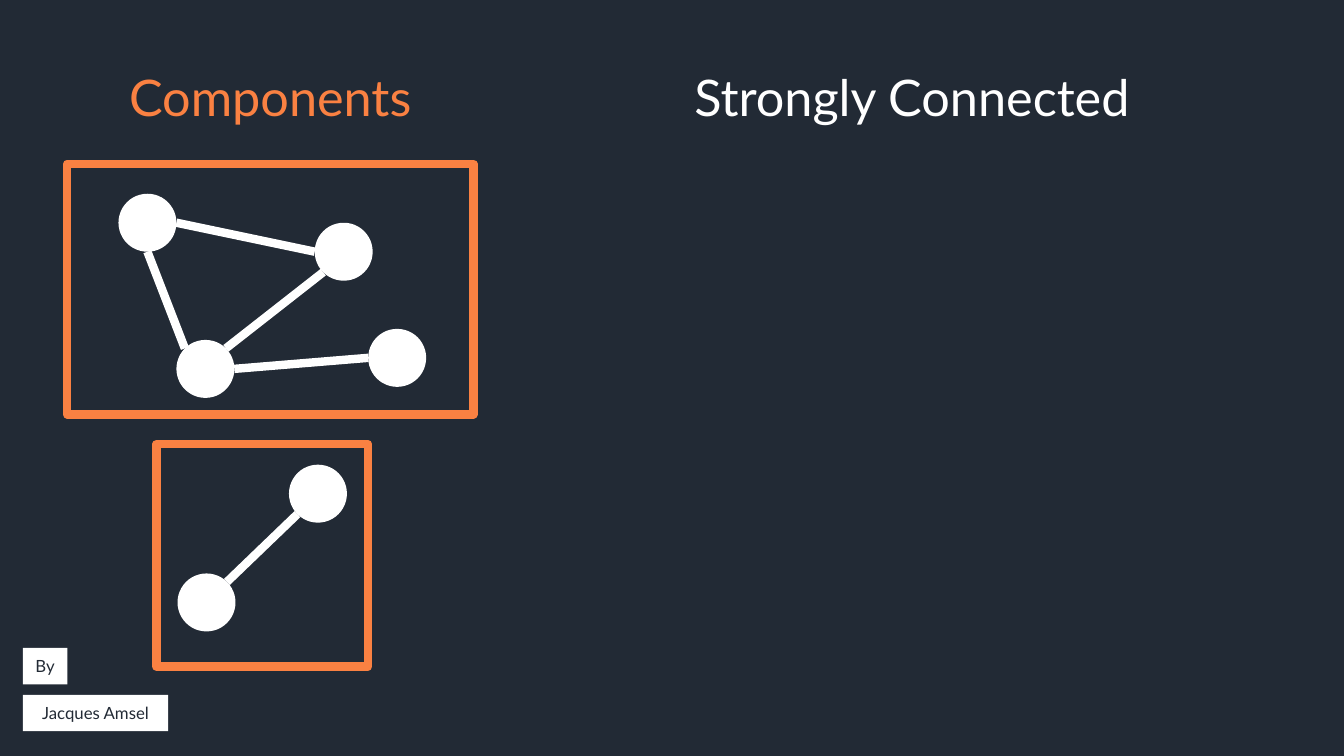
from math import cos, radians, sin
from pptx import Presentation
from pptx.dml.color import RGBColor
from pptx.enum.shapes import MSO_CONNECTOR as Link, MSO_SHAPE as Preset
from pptx.enum.text import MSO_ANCHOR as Anchor, MSO_AUTO_SIZE as AutoSize, PP_ALIGN as Align
from pptx.oxml.ns import qn
from pptx.util import Pt

NAVY, WHITE, ORANGE = "222A35", "FFFFFF", "FA8142"
NODE_SIZE = 41.4
STROKE = 6


def paint(fill, color):
    fill.solid()
    fill.fore_color.rgb = RGBColor.from_string(color)


def write(target, words, size, color, align, anchor):
    frame = target.text_frame
    frame.text = words
    paragraph = frame.paragraphs[0]
    font = paragraph.runs[0].font
    formats = {
        frame: {"word_wrap": True, "auto_size": AutoSize.NONE, "vertical_anchor": anchor},
        paragraph: {"alignment": align},
        font: {"name": "Lato", "size": Pt(size)},
    }
    for part, values in formats.items():
        for attribute, value in values.items():
            setattr(part, attribute, value)
    paint(font.fill, color)


deck = Presentation()
deck.slide_width, deck.slide_height = Pt(960), Pt(540)
slide = deck.slides.add_slide(deck.slide_layouts[5])
paint(slide.background.fill, NAVY)
shapes = slide.shapes

components = shapes.title
place = {"left": 85, "top": 43.9, "width": 415.4, "height": 51.1}
for attribute, value in place.items():
    setattr(components, attribute, Pt(value))
write(components, "Components", 36, ORANGE, Align.LEFT, Anchor.TOP)

strongly_connected = shapes.add_textbox(Pt(488.9), Pt(43.9), Pt(386.6), Pt(51.1))
write(strongly_connected, "Strongly Connected", 36, WHITE, Align.LEFT, Anchor.TOP)

for words, top, width in [("By", 462.8, 31.7), ("Jacques Amsel", 496.3, 103.7)]:
    label = shapes.add_shape(Preset.RECTANGLE, Pt(16.4), Pt(top), Pt(width), Pt(26))
    label.shadow.inherit = False
    paint(label.fill, WHITE)
    label.line.fill.background()
    write(label, words, 12, NAVY, Align.CENTER, Anchor.MIDDLE)

nodes = {
    "A": (84.6, 138.4),
    "B": (224.8, 159.1),
    "C": (126, 242.8),
    "D": (263, 234.9),
    "E": (126.8, 409.6),
    "F": (206.4, 331.9),
}
for left, top in nodes.values():
    node = shapes.add_shape(Preset.OVAL, Pt(left), Pt(top), Pt(NODE_SIZE), Pt(NODE_SIZE))
    node.shadow.inherit = False
    paint(node.fill, WHITE)
    node.line.fill.background()

edges = [
    ("A", 0, "B", 180),
    ("C", -45, "B", 135),
    ("C", -135, "A", 90),
    ("C", 0, "D", 180),
    ("E", -45, "F", 135),
]
radius = NODE_SIZE / 2
for start, start_angle, end, end_angle in edges:
    ends = []
    for name, angle in [(start, start_angle), (end, end_angle)]:
        left, top = nodes[name]
        ends.append(Pt(left + radius + radius * cos(radians(angle))))
        ends.append(Pt(top + radius + radius * sin(radians(angle))))
    edge = shapes.add_connector(Link.STRAIGHT, *ends)
    paint(edge.line.fill, WHITE)
    edge.line.width = Pt(STROKE)
    properties = edge.element.spPr
    properties.append(properties.makeelement(qn("a:effectLst"), {}))

for bounds in [(48, 117, 290.2, 179), (111.7, 317.3, 151.2, 158.8)]:
    frame_box = shapes.add_shape(Preset.RECTANGLE, *map(Pt, bounds))
    frame_box.shadow.inherit = False
    frame_box.fill.background()
    paint(frame_box.line.fill, ORANGE)
    frame_box.line.width = Pt(STROKE)

deck.save("out.pptx")
